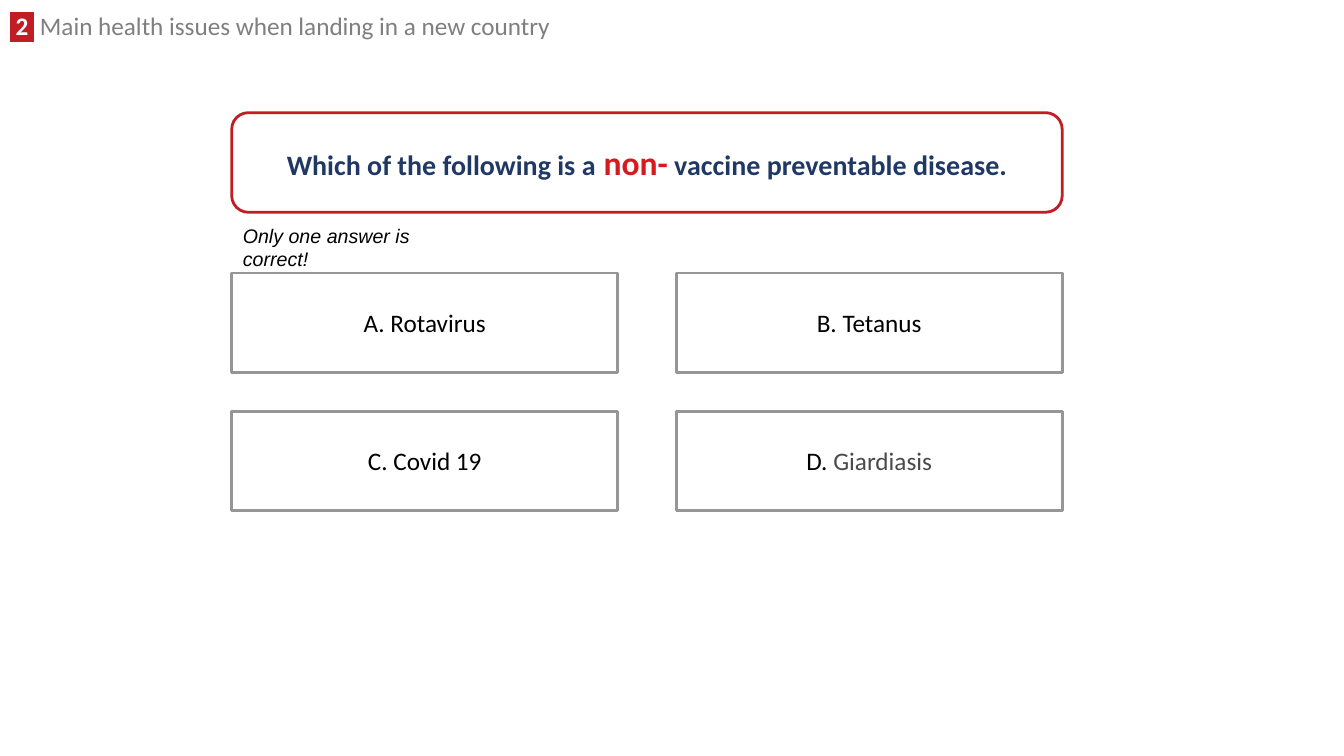
import pptx
import pptx.util
import pptx.dml.color
import pptx.enum.shapes
import pptx.enum.text
import pptx.oxml
import pptx.oxml.ns

Cm, Pt = pptx.util.Cm, pptx.util.Pt
SHAPE = pptx.enum.shapes.MSO_SHAPE
ALIGN = pptx.enum.text.PP_ALIGN
ANCHOR = pptx.enum.text.MSO_ANCHOR

RED, GREY, NAVY, BLACK, WHITE = "C01E24", "969696", "203864", "000000", "FFFFFF"

# Content: runs as (text, size, colour, bold)
TITLE = [(" 2 ", 18, WHITE, True),
         (" Main health issues when landing in a new country", 18, "7F7F7F", False)]
QUESTION = [("Which of the following is a", 20, NAVY, True),
            (" non-", 24, "D71920", True),
            (" vaccine preventable disease.", 20, NAVY, True)]
HINT = "Only one answer is correct!"
ANSWERS = [
    [("A. Rotavirus", 18, BLACK, False)],
    [("B. Tetanus", 18, BLACK, False)],
    [("C. Covid 19", 18, BLACK, False)],
    [("D. ", 18, BLACK, False), ("Giardiasis", 18, "4A4A4A", False)],
]

# Layout in centimetres
LEFT, WIDTH, BOX_H = 5.84, 20.93, 2.51
QUESTION_TOP, ANSWER_TOP = 2.84, 6.88
ANSWER_W, ROW_STEP = 9.73, 3.48
COL_STEP = WIDTH - ANSWER_W


def rgb(value):
    return pptx.dml.color.RGBColor.from_string(value)


def add_runs(p, runs):
    for text, size, color, bold in runs:
        r = p.add_run()
        r.text = text
        r.font.size = Pt(size)
        r.font.name = "Calibri"
        r.font.bold = bold
        r.font.color.rgb = rgb(color)


def highlight(r, color):
    fill = r.font._element.find(pptx.oxml.ns.qn("a:solidFill"))
    fill.addnext(pptx.oxml.parse_xml(
        f'<a:highlight {pptx.oxml.ns.nsdecls("a")}><a:srgbClr val="{color}"/></a:highlight>'))


def add_box(kind, left, top, width, line, runs):
    sp = s.shapes.add_shape(kind, Cm(left), Cm(top), Cm(width), Cm(BOX_H))
    sp.shadow.inherit = False
    sp.fill.solid()
    sp.fill.fore_color.rgb = rgb(WHITE)
    sp.line.color.rgb = rgb(line)
    sp.line.width = Pt(2)
    tf = sp.text_frame
    tf.word_wrap = True
    tf.vertical_anchor = ANCHOR.MIDDLE
    p = tf.paragraphs[0]
    p.alignment = ALIGN.CENTER
    add_runs(p, runs)


prs = pptx.Presentation()
prs.slide_width, prs.slide_height = Cm(33.87), Cm(19.05)
s = prs.slides.add_slide(prs.slide_layouts[5])

# Title with highlighted section number
title = s.shapes.title
title.left, title.top, title.width, title.height = Cm(0), Cm(0.28), Cm(14.5), Cm(0.89)
tf = title.text_frame
tf.word_wrap = True
tf.auto_size = pptx.enum.text.MSO_AUTO_SIZE.NONE
tf.vertical_anchor = ANCHOR.TOP
p = tf.paragraphs[0]
p.alignment = ALIGN.LEFT
p.line_spacing = 0.8
add_runs(p, TITLE)
highlight(p.runs[0], RED)

# Question
add_box(SHAPE.ROUNDED_RECTANGLE, LEFT, QUESTION_TOP, WIDTH, RED, QUESTION)

# Answers in a two-column grid
for i, runs in enumerate(ANSWERS):
    row, col = divmod(i, 2)
    add_box(SHAPE.RECTANGLE, LEFT + col * COL_STEP, ANSWER_TOP + row * ROW_STEP,
            ANSWER_W, GREY, runs)

# Hint above the answers
hint = s.shapes.add_textbox(Cm(5.87), Cm(5.51), Cm(5.99), Cm(0.86))
tf = hint.text_frame
tf.word_wrap = True
tf.text = HINT
font = tf.paragraphs[0].runs[0].font
font.name = "Arial"
font.size = Pt(14)
font.italic = True
font.color.rgb = rgb(BLACK)

prs.save("out.pptx")
